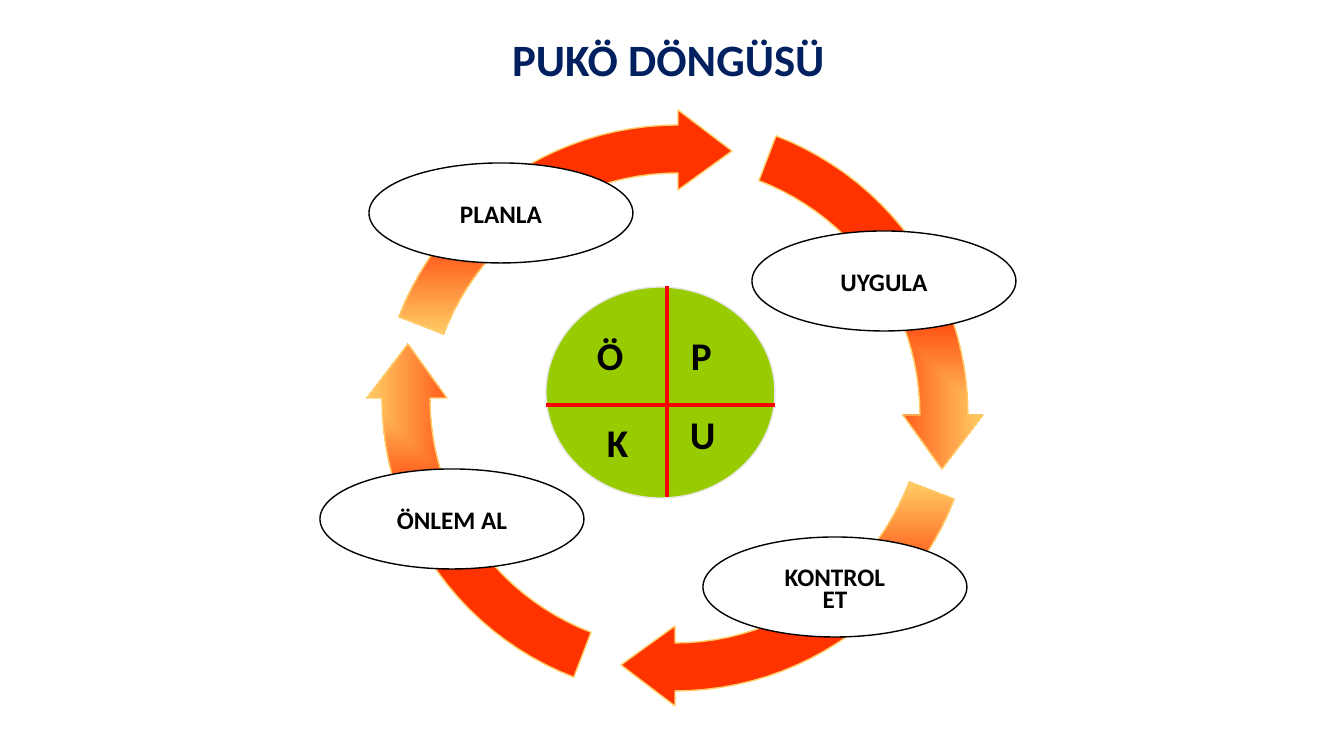
import math
from dataclasses import dataclass

import pptx
import pptx.dml.color
import pptx.dml.fill
import pptx.enum.shapes
import pptx.enum.text
import pptx.oxml
import pptx.oxml.ns
import pptx.util

PX = 12192000 / 1344
FONT = "Calibri"
COLORS = {
    "navy": "002060",
    "black": "000000",
    "white": "FFFFFF",
    "green": "99CC00",
    "gray": "E7E6E6",
    "red": "FF0000",
    "amber": "FFCC66",
    "flame": "FF3300",
}

# Arrow band, measured from the centre of its ring
OUTER, INNER = 299, 251
BARB_OUT, BARB_IN = 314, 234
TIP, REACH = 273, 54
SWEEP, STEP = 69, 3


@dataclass
class Arrow:
    x: int
    y: int
    head: int  # degrees, clockwise from the right
    glow: str  # corner where the gradient starts


@dataclass
class Stage:
    text: str
    x: int
    y: int


@dataclass
class Letter:
    text: str
    x: int
    y: int
    width: int


@dataclass
class Rule:
    x1: int
    y1: int
    x2: int
    y2: int


ARROWS = [
    Arrow(681, 398, 180, 'l="0" t="0" r="100000" b="100000"'),
    Arrow(669, 415, 0, 'l="100000" t="100000" r="0" b="0"'),
    Arrow(678, 424, 270, 'l="0" t="100000" r="100000" b="0"'),
    Arrow(675, 392, 90, 'l="100000" t="0" r="0" b="100000"'),
]
STAGES = [
    Stage("PLANLA", 369, 163),
    Stage("KONTROL\nET", 703, 537),
    Stage("UYGULA", 752, 231),
    Stage("ÖNLEM AL", 320, 469),
]
RULES = [Rule(667, 286, 667, 497), Rule(546, 405, 775, 405)]
LETTERS = [
    Letter("P", 681, 326, 41),
    Letter("U", 680, 405, 46),
    Letter("K", 597, 413, 42),
    Letter("Ö", 587, 326, 47),
]


def emu(px: float) -> int:
    return round(px * PX)


def color(name: str) -> pptx.dml.color.RGBColor:
    return pptx.dml.color.RGBColor.from_string(COLORS[name])


def style(para, size: int, tint: str = "black") -> None:
    para.font.name = FONT
    para.font.size = pptx.util.Pt(size)
    para.font.bold = True
    para.font.color.rgb = color(tint)


def outline(shape, tint: str, width: float = 1) -> None:
    shape.line.color.rgb = color(tint)
    shape.line.width = pptx.util.Pt(width)


def add_title(slide, text: str) -> None:
    title = slide.shapes.title
    title.left, title.top = emu(446), emu(27)
    title.width, title.height = emu(445), emu(64)
    title.text_frame.text = text
    title.text_frame.auto_size = pptx.enum.text.MSO_AUTO_SIZE.NONE
    para = title.text_frame.paragraphs[0]
    para.alignment = pptx.enum.text.PP_ALIGN.CENTER
    style(para, 32, "navy")


def trace(arrow: Arrow) -> list[tuple[int, int]]:
    """Return the outline of a curved arrow, in EMU."""

    def spot(radius: float, turn: float, ahead: float = 0) -> tuple[int, int]:
        angle = math.radians(arrow.head + turn)
        cos, sin = math.cos(angle), math.sin(angle)
        return (emu(arrow.x + radius * cos - ahead * sin),
                emu(arrow.y + radius * sin + ahead * cos))

    turns = range(-SWEEP, 1, STEP)
    return (
        [spot(OUTER, turn) for turn in turns]
        + [spot(BARB_OUT, 0), spot(TIP, 0, REACH), spot(BARB_IN, 0)]
        + [spot(INNER, turn) for turn in reversed(turns)]
    )


def add_arrow(slide, arrow: Arrow) -> None:
    first, *rest = trace(arrow)
    pen = slide.shapes.build_freeform(*first)
    pen.add_line_segments(rest, close=True)
    shape = pen.convert_to_shape()
    shape.shadow.inherit = False
    outline(shape, "amber")
    shape.fill.gradient()
    for stop, tint in zip(shape.fill.gradient_stops, ("amber", "flame")):
        stop.color.rgb = color(tint)
    lin = shape._element.spPr.find(".//" + pptx.oxml.ns.qn("a:lin"))
    ramp = pptx.oxml.parse_xml(
        f'<a:path {pptx.oxml.ns.nsdecls("a")} path="rect">'
        f"<a:fillToRect {arrow.glow}/></a:path>")
    lin.getparent().replace(lin, ramp)


def add_oval(slide, x: int, y: int, width: int, height: int,
             fill: str, edge: str):
    oval = slide.shapes.add_shape(
        pptx.enum.shapes.MSO_SHAPE.OVAL,
        emu(x), emu(y), emu(width), emu(height))
    oval.shadow.inherit = False
    oval.fill.solid()
    oval.fill.fore_color.rgb = color(fill)
    outline(oval, edge)
    return oval


def add_stage(slide, stage: Stage) -> None:
    oval = add_oval(slide, stage.x, stage.y, 264, 100, "white", "black")
    frame = oval.text_frame
    frame.word_wrap = False
    frame.vertical_anchor = pptx.enum.text.MSO_ANCHOR.MIDDLE
    frame.text = stage.text
    for para in frame.paragraphs:
        para.alignment = pptx.enum.text.PP_ALIGN.CENTER
        style(para, 18)
    for para in frame.paragraphs[1:]:
        para.line_spacing = 0.7


def add_rule(slide, rule: Rule) -> None:
    line = slide.shapes.add_connector(
        pptx.enum.shapes.MSO_CONNECTOR.STRAIGHT,
        emu(rule.x1), emu(rule.y1), emu(rule.x2), emu(rule.y2))
    outline(line, "red", 2.25)
    line._element.spPr.append(
        pptx.oxml.parse_xml(f'<a:effectLst {pptx.oxml.ns.nsdecls("a")}/>'))


def add_letter(slide, letter: Letter) -> None:
    box = slide.shapes.add_textbox(
        emu(letter.x), emu(letter.y), emu(letter.width), emu(57))
    frame = box.text_frame
    frame.word_wrap = False
    frame.auto_size = pptx.enum.text.MSO_AUTO_SIZE.SHAPE_TO_FIT_TEXT
    frame.text = letter.text
    style(frame.paragraphs[0], 28)


def main() -> None:
    deck = pptx.Presentation()
    deck.slide_width, deck.slide_height = emu(1344), emu(756)
    slide = deck.slides.add_slide(deck.slide_layouts[5])
    add_title(slide, "PUKÖ DÖNGÜSÜ")
    for arrow in ARROWS:
        add_arrow(slide, arrow)
    for stage in STAGES:
        add_stage(slide, stage)
    add_oval(slide, 546, 287, 229, 211, "green", "gray")
    for rule in RULES:
        add_rule(slide, rule)
    for letter in LETTERS:
        add_letter(slide, letter)
    deck.save("out.pptx")


if __name__ == "__main__":
    main()
